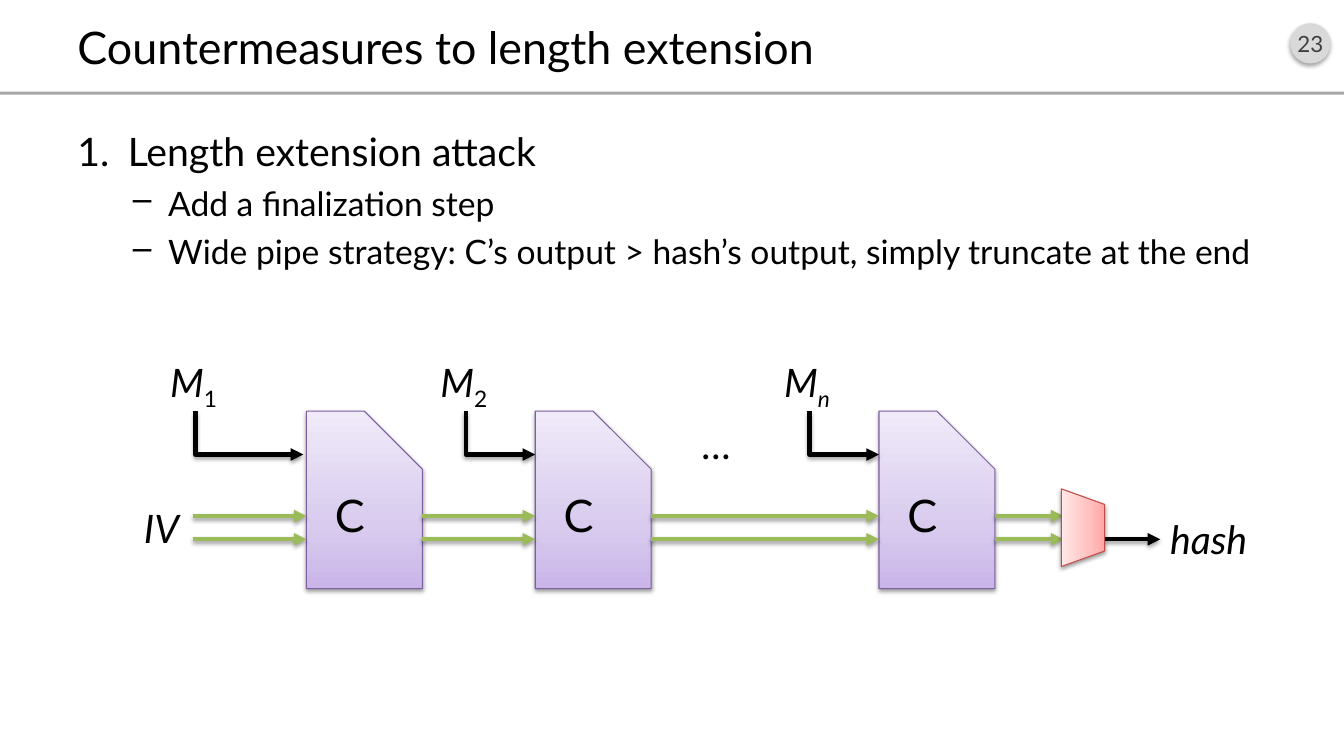
import pptx
import pptx.dml.color
import pptx.enum.shapes
import pptx.enum.text
import pptx.oxml
import pptx.oxml.ns
import pptx.util

# The grid has ten columns and ten rows to the inch
COLUMNS, ROWS = 133.33, 75
FONT = "Lato"
BLACK, GREEN = "000000", "9BBB59"
PURPLES = ("C9B5E8", "D8CBEE", "F0EAF9")
REDS = ("FFA6A5", "FFC0BF", "FFE7E7")

SHAPES = pptx.enum.shapes.MSO_SHAPE
CONNECTORS = pptx.enum.shapes.MSO_CONNECTOR
ALIGN = pptx.enum.text.PP_ALIGN
ANCHOR = pptx.enum.text.MSO_ANCHOR

# Compression blocks and the rows they share
BLOCK_LEFTS = (30.4, 53.1, 87.2)
BLOCK_TOP, BLOCK_WIDTH, BLOCK_HEIGHT = 40.8, 11.5, 17.6
MESSAGE_ROW, WIRE_ROWS = 45.1, (51.2, 53.5)
MESSAGES = (  # subscript, italic subscript, arrow start, arrow end
    ("1", False, 19.4, 30.1),
    ("2", False, 46.2, 53.1),
    ("n", True, 80.3, 87.2),
)


def grid(*counts):
    return [pptx.util.Inches(count / 10) for count in counts]


def color(value):
    return pptx.dml.color.RGBColor.from_string(value)


def element(markup):
    tag, rest = markup.split(" ", 1)
    namespace = pptx.oxml.ns.nsdecls("a")
    return pptx.oxml.parse_xml(f"{tag} {namespace} {rest}")


def add_shadow(properties, opacity=38):
    for effects in properties.findall(pptx.oxml.ns.qn("a:effectLst")):
        properties.remove(effects)
    properties.append(element(
        '<a:effectLst ><a:outerShdw blurRad="39400" dist="21600" dir="5400000" rotWithShape="0">'
        f'<a:srgbClr val="000000"><a:alpha val="{opacity}000"/></a:srgbClr>'
        '</a:outerShdw></a:effectLst>'))


def write(paragraph, text, size=28, italic=False, ink=BLACK, align=None, subscript=False):
    run = paragraph.add_run()
    run.text = text
    run.font.name, run.font.size = FONT, pptx.util.Pt(size)
    run.font.italic = italic
    run.font.color.rgb = color(ink)
    if subscript:
        run.font._element.set("baseline", "-25000")
    if align is not None:
        paragraph.alignment = align


def add_text_frame(slide, box, wrap=True, anchor=ANCHOR.TOP):
    frame = slide.shapes.add_textbox(*grid(*box)).text_frame
    frame.word_wrap, frame.vertical_anchor = wrap, anchor
    if not wrap:
        frame.auto_size = pptx.enum.text.MSO_AUTO_SIZE.SHAPE_TO_FIT_TEXT
    return frame


def add_label(slide, text, box, **style):
    paragraph = add_text_frame(slide, box, wrap=False).paragraphs[0]
    write(paragraph, text, italic=True, **style)
    return paragraph


def add_flat_shape(slide, kind, box, fill):
    shape = slide.shapes.add_shape(kind, *grid(*box))
    shape.shadow.inherit = False
    shape.fill.solid()
    shape.fill.fore_color.rgb = color(fill)
    shape.line.fill.background()
    return shape


def add_gradient_shape(slide, kind, box, shades, outline):
    shape = add_flat_shape(slide, kind, box, shades[0])
    shape.line.color.rgb = color(outline)
    shape.line.width = pptx.util.Pt(0.75)
    stops = "".join(
        f'<a:gs pos="{share}000"><a:srgbClr val="{shade}"/></a:gs>'
        for share, shade in zip((0, 35, 100), shades))
    properties = shape._element.spPr
    solid = properties.find(pptx.oxml.ns.qn("a:solidFill"))
    properties.replace(solid, element(
        f'<a:gradFill rotWithShape="1"><a:gsLst>{stops}</a:gsLst>'
        '<a:lin ang="16200000" scaled="0"/></a:gradFill>'))
    add_shadow(properties)
    return shape


def add_arrow(slide, ends, ink, kind=CONNECTORS.STRAIGHT):
    arrow = slide.shapes.add_connector(kind, *grid(*ends))
    arrow.line.color.rgb = color(ink)
    arrow.line.width = pptx.util.Pt(3)
    arrow.line._get_or_add_ln().append(element('<a:tailEnd type="triangle"/>'))
    add_shadow(arrow._element.spPr)
    return arrow


def add_down_right_arrow(slide, left, top, right, bottom):
    # A single-bend connector, mirrored and turned a quarter to the left
    middle, center = (left + right) / 2, (top + bottom) / 2
    half_width, half_height = (bottom - top) / 2, (right - left) / 2
    ends = (middle + half_width, center - half_height,
            middle - half_width, center + half_height)
    properties = add_arrow(slide, ends, BLACK, CONNECTORS.ELBOW)._element.spPr
    properties.find(pptx.oxml.ns.qn("a:prstGeom")).set("prst", "bentConnector2")
    properties.find(pptx.oxml.ns.qn("a:xfrm")).set("rot", "16200000")


def add_list_item(paragraph, text, size, before, margin, hanging, bullet):
    write(paragraph, text, size=size)
    paragraph.space_before = pptx.util.Pt(before)
    properties = paragraph._element.get_or_add_pPr()
    margin, hanging = grid(margin, hanging)
    properties.set("marL", str(margin))
    properties.set("indent", str(-hanging))
    properties.append(element(bullet))


def add_header(slide):
    badge = add_flat_shape(slide, SHAPES.OVAL, (128, 2.3, 4, 4), "D9D9D9")
    add_shadow(badge._element.spPr, opacity=35)
    frame = badge.text_frame
    frame.margin_left = frame.margin_right = 0
    frame.vertical_anchor = ANCHOR.MIDDLE
    write(frame.paragraphs[0], "23", size=16, ink="404040", align=ALIGN.CENTER)
    add_flat_shape(slide, SHAPES.RECTANGLE, (0, 9.1, COLUMNS, 0.3), "A6A6A6")
    title = add_text_frame(slide, (6.7, 1.6, 120, 6), anchor=ANCHOR.MIDDLE)
    write(title.paragraphs[0], "Countermeasures to length extension", size=32)


def add_list(slide):
    frame = add_text_frame(slide, (6.7, 12.1, 120, 57.5))
    add_list_item(frame.paragraphs[0], "Length extension attack", 28, 8, 5, 5,
                  '<a:buAutoNum type="arabicPeriod"/>')
    for text in ("Add a finalization step",
                 "Wide pipe strategy: C’s output > hash’s output, simply truncate at the end"):
        add_list_item(frame.add_paragraph(), text, 24, 6, 9, 3.5, '<a:buChar char="–"/>')


def add_blocks(slide):
    for left in BLOCK_LEFTS:
        box = (left, BLOCK_TOP, BLOCK_WIDTH, BLOCK_HEIGHT)
        block = add_gradient_shape(slide, SHAPES.SNIP_1_RECTANGLE, box, PURPLES, "7D60A0")
        block.adjustments[0] = 0.5
        block.text_frame.vertical_anchor = ANCHOR.MIDDLE
        write(block.text_frame.paragraphs[0], "C", size=32, align=ALIGN.CENTER)


def add_messages(slide):
    for subscript, italic, start, end in MESSAGES:
        paragraph = add_label(slide, "M", (start - 3.5, 35.1, 7.1, 5.7))
        write(paragraph, subscript, italic=italic, subscript=True)
        add_down_right_arrow(slide, start, BLOCK_TOP, end, MESSAGE_ROW)
    add_label(slide, "…", (68.7, 41.2, 7.1, 5.7))


def add_wide_pipe(slide):
    add_label(slide, "IV", (13.3, 49.5, 5.8, 5.7))
    starts = [19.1] + [left + BLOCK_WIDTH for left in BLOCK_LEFTS]
    ends = [*BLOCK_LEFTS, 105.5]
    for start, end in zip(starts, ends):
        for row in WIRE_ROWS:
            add_arrow(slide, (start, row, end, row), GREEN)


def add_truncation(slide):
    add_arrow(slide, (109.6, WIRE_ROWS[1], 115.1, WIRE_ROWS[1]), BLACK)
    add_label(slide, "hash", (115.1, 50.6, 10.1, 5.7))
    funnel = add_gradient_shape(slide, SHAPES.FLOWCHART_MANUAL_OPERATION,
                                (103.6, 50.2, 7.7, 4.3), REDS, "BF4C48")
    funnel.rotation = 270


def main():
    presentation = pptx.Presentation()
    presentation.slide_width, presentation.slide_height = grid(COLUMNS, ROWS)
    slide = presentation.slides.add_slide(presentation.slide_layouts[6])
    # Heading and list
    add_header(slide)
    add_list(slide)
    # Hash chain
    add_blocks(slide)
    add_messages(slide)
    add_wide_pipe(slide)
    add_truncation(slide)
    presentation.save("out.pptx")


if __name__ == "__main__":
    main()
